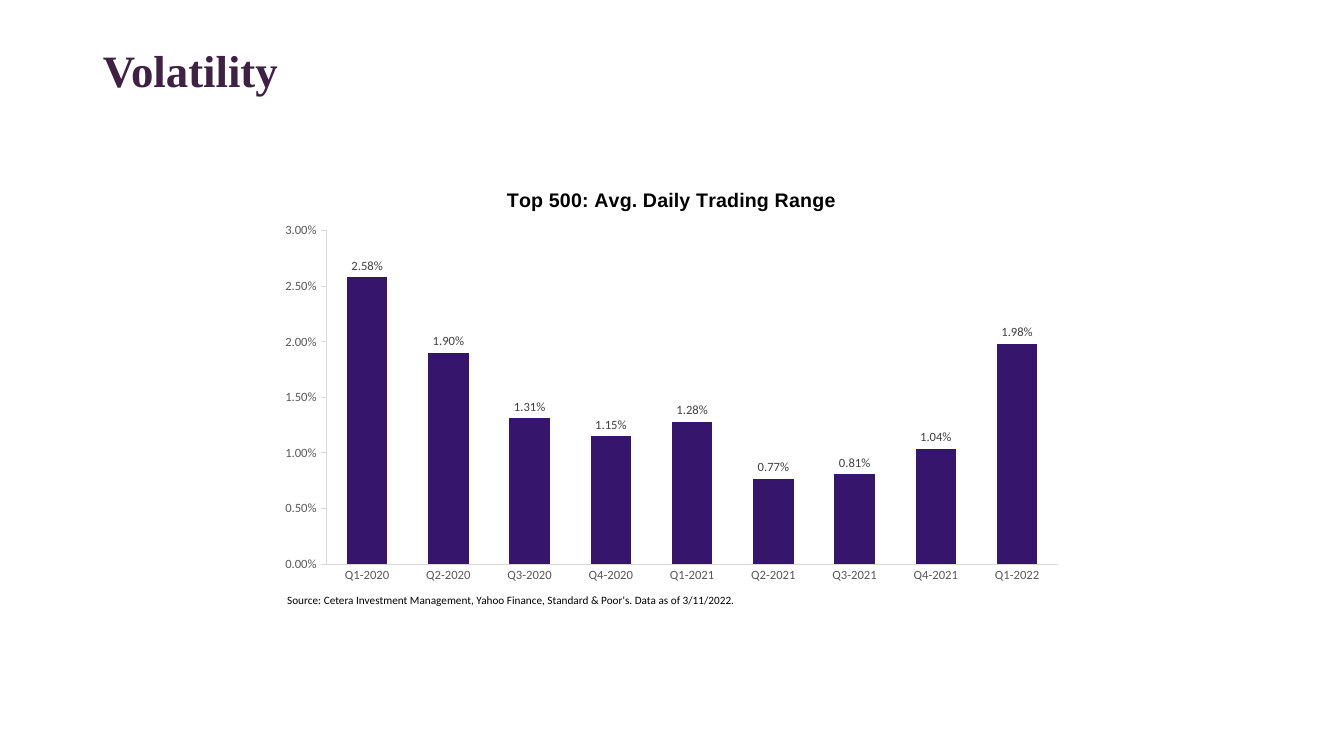
import lxml.etree
import pptx
import pptx.chart.data
import pptx.dml.color
import pptx.enum.chart
import pptx.enum.shapes
import pptx.enum.text
import pptx.oxml.ns
import pptx.util

THEME = {
    "title": {"name": "Times New Roman", "size": 32, "bold": True, "color": "3E2144"},
    "chart": {"name": "Calibri", "size": 10, "bold": False, "color": "000000"},
    "chart_title": {"name": "Arial", "size": 14, "bold": True, "color": "000000"},
    "axis": {"name": "Calibri", "size": 9, "bold": False, "color": "595959"},
    "label": {"name": "Calibri", "size": 9, "bold": False, "color": "404040"},
    "source": {"name": "Calibri", "size": 8, "bold": False, "color": "000000"},
    "bar": "36166D",
    "axis_line": "D9D9D9",
    "paper": "FFFFFF",
}
rgb = pptx.dml.color.RGBColor.from_string


def style_font(font, role):
    """Apply one of the theme's text styles to a font."""
    for name, value in THEME[role].items():
        if name == "color":
            font.color.rgb = rgb(value)
        else:
            setattr(font, name, pptx.util.Pt(value) if name == "size" else value)


def set_layout(element, index, settings):
    """Give a chart part a manual layout, in shares of the chart's size."""
    for old_layout in element.findall(pptx.oxml.ns.qn("c:layout")):
        element.remove(old_layout)
    layout = lxml.etree.Element(pptx.oxml.ns.qn("c:layout"))
    manual = lxml.etree.SubElement(layout, pptx.oxml.ns.qn("c:manualLayout"))
    for name, value in settings.items():
        lxml.etree.SubElement(manual, pptx.oxml.ns.qn(f"c:{name}")).set("val", str(value))
    element.insert(index, layout)


presentation = pptx.Presentation()
presentation.slide_width = pptx.util.Inches(13.33)
presentation.slide_height = pptx.util.Inches(7.5)
slide = presentation.slides.add_slide(presentation.slide_layouts[5])

# Left, top, width and height in percent of the slide
percents = {
    "title": (6.9, 5.33, 86.27, 8.53),
    "chart": (20.11, 22.13, 59.79, 55.87),
    "source": (20.63, 77.87, 61.59, 2.93),
}
slide_size = (presentation.slide_width, presentation.slide_height) * 2
bounds = {
    name: [int(share * length / 100) for share, length in zip(shares, slide_size)]
    for name, shares in percents.items()
}

# Slide title
title = slide.shapes.title
for name, value in zip(("left", "top", "width", "height"), bounds["title"]):
    setattr(title, name, value)
title.text_frame.text = "Volatility"
title.text_frame.auto_size = pptx.enum.text.MSO_AUTO_SIZE.NONE
title.text_frame.vertical_anchor = pptx.enum.text.MSO_ANCHOR.MIDDLE
title_paragraph = title.text_frame.paragraphs[0]
title_paragraph.alignment = pptx.enum.text.PP_ALIGN.LEFT
title_paragraph.line_spacing = 0.9
style_font(title_paragraph.runs[0].font, "title")

# Column chart
trading_ranges = {
    "Q1-2020": 0.0258, "Q2-2020": 0.019, "Q3-2020": 0.0131,
    "Q4-2020": 0.0115, "Q1-2021": 0.0128, "Q2-2021": 0.0077,
    "Q3-2021": 0.0081, "Q4-2021": 0.0104, "Q1-2022": 0.0198,
}
chart_data = pptx.chart.data.CategoryChartData(number_format="0.00%")
chart_data.categories = trading_ranges.keys()
chart_data.add_series("Series 1", trading_ranges.values())
chart = slide.shapes.add_chart(
    pptx.enum.chart.XL_CHART_TYPE.COLUMN_CLUSTERED, *bounds["chart"], chart_data
).chart
style_font(chart.font, "chart")
chart.has_legend = False
chart.has_title = True
chart_title = chart.chart_title
chart_title.include_in_layout = False
chart_title.text_frame.text = "Top 500: Avg. Daily Trading Range"
style_font(chart_title.text_frame.paragraphs[0].runs[0].font, "chart_title")
set_layout(chart_title.element, 1, {"xMode": "edge", "yMode": "edge", "x": 0.29, "y": 0.04})
plot_area = chart.element.find(".//" + pptx.oxml.ns.qn("c:plotArea"))
set_layout(plot_area, 0, {
    "layoutTarget": "inner", "xMode": "edge", "yMode": "edge",
    "x": 0.07, "y": 0.15, "w": 0.91, "h": 0.79,
})

tick_marks = pptx.enum.chart.XL_TICK_MARK
for axis, tick_mark in (
    (chart.category_axis, tick_marks.NONE),
    (chart.value_axis, tick_marks.OUTSIDE),
):
    axis.has_major_gridlines = False
    axis.major_tick_mark = tick_mark
    axis.minor_tick_mark = tick_marks.NONE
    axis.format.line.color.rgb = rgb(THEME["axis_line"])
    axis.format.line.width = pptx.util.Pt(0.75)
    style_font(axis.tick_labels.font, "axis")

percent_format = {"number_format": "0.00%", "number_format_is_linked": False}
scale = {"minimum_scale": 0, "maximum_scale": 0.03, "major_unit": 0.005}
plot = chart.plots[0]
plot.has_data_labels = True
labels = plot.data_labels
label_format = {
    "show_value": True,
    "position": pptx.enum.chart.XL_LABEL_POSITION.OUTSIDE_END,
}
plot_format = {"gap_width": 100, "overlap": -27, "vary_by_categories": False}
for target, settings in (
    (chart.value_axis, scale),
    (chart.value_axis.tick_labels, percent_format),
    (labels, percent_format | label_format),
    (plot, plot_format),
):
    for name, value in settings.items():
        setattr(target, name, value)
style_font(labels.font, "label")
bar_fill = plot.series[0].format.fill
bar_fill.solid()
bar_fill.fore_color.rgb = rgb(THEME["bar"])

# Source line
source = slide.shapes.add_shape(pptx.enum.shapes.MSO_SHAPE.RECTANGLE, *bounds["source"])
source.shadow.inherit = False
source.fill.solid()
source.fill.fore_color.rgb = rgb(THEME["paper"])
source.line.fill.background()
source.text_frame.word_wrap = True
source.text_frame.vertical_anchor = pptx.enum.text.MSO_ANCHOR.MIDDLE
source_paragraph = source.text_frame.paragraphs[0]
source_paragraph.text = (
    "Source: Cetera Investment Management, Yahoo Finance, "
    "Standard & Poor's. Data as of 3/11/2022."
)
source_paragraph.alignment = pptx.enum.text.PP_ALIGN.LEFT
style_font(source_paragraph.runs[0].font, "source")

presentation.save("out.pptx")
